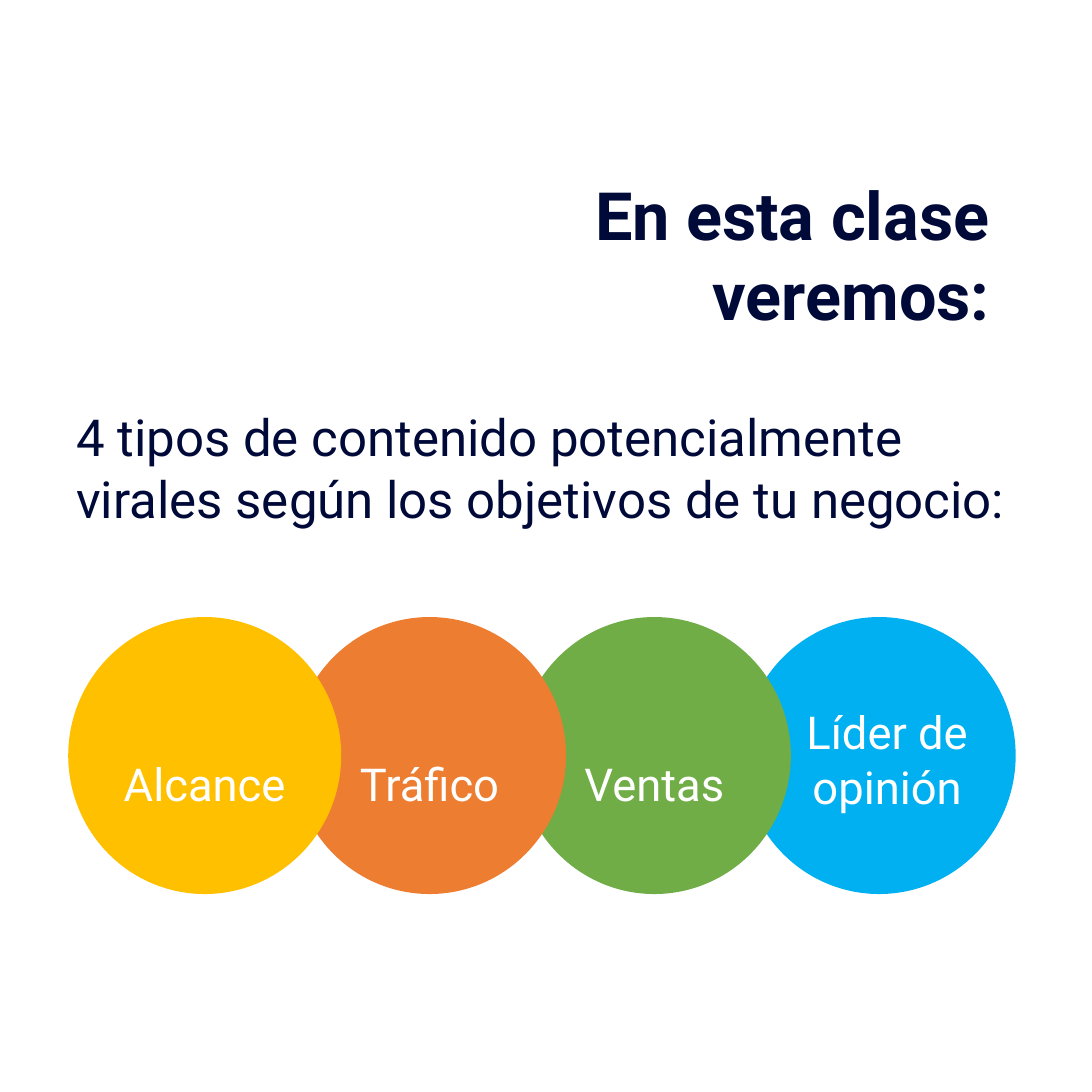
from pptx import Presentation
from pptx.dml.color import RGBColor
from pptx.enum.shapes import MSO_SHAPE
from pptx.enum.text import MSO_ANCHOR, MSO_AUTO_SIZE, PP_ALIGN
from pptx.util import Cm, Pt

COLORS = {
    "navy": "000A39",
    "white": "FFFFFF",
    "yellow": "FFC000",
    "orange": "ED7D31",
    "green": "70AD47",
    "blue": "00B0F0",
}
SIDE = 27.2
LEFT, TOP, STEP = 1.7, 15.37, 5.6
WIDE, HIGH = 6.8, 6.9

# text, fill, label shift, label top, label height, line spacing
GOALS = [
    ("Alcance", "yellow", 0, 18.16, 0.89, 1.5),
    ("Tráfico", "orange", 0, 18.16, 0.89, 1.5),
    ("Ventas", "green", 0, 18.16, 0.89, 1.5),
    ("Líder de\nopinión", "blue", 0.2, 17.55, 2.13, 1.0),
]


def color(name):
    return RGBColor.from_string(COLORS[name])


def write(shape, text, size, tint, align, bold=False, anchor=MSO_ANCHOR.TOP):
    """Fill a shape with one styled paragraph and return that paragraph."""
    frame = shape.text_frame
    frame.word_wrap = True
    frame.auto_size = MSO_AUTO_SIZE.NONE
    frame.vertical_anchor = anchor
    frame.margin_left = frame.margin_right = 0
    frame.margin_top = frame.margin_bottom = 0
    para = frame.paragraphs[0]
    para.text = text
    para.alignment = align
    for run in para.runs:
        run.font.name = "Roboto"
        run.font.size = Pt(size)
        run.font.bold = bold
        run.font.color.rgb = color(tint)
    return para


def add_title(slide):
    title = slide.shapes.title
    title.left, title.top = Cm(7.55), Cm(4.14)
    title.width, title.height = Cm(17.11), Cm(4.37)
    write(title, "En esta clase veremos:", 47, "navy", PP_ALIGN.RIGHT,
          bold=True, anchor=MSO_ANCHOR.MIDDLE)


def add_intro(slide):
    box = slide.shapes.add_textbox(Cm(1.9), Cm(10.11), Cm(23.6), Cm(3.07))
    write(box, "4 tipos de contenido potencialmente virales "
          "según los objetivos de tu negocio:", 36, "navy", PP_ALIGN.LEFT)


def add_disc(slide, left, fill):
    disc = slide.shapes.add_shape(
        MSO_SHAPE.OVAL, Cm(left), Cm(TOP), Cm(WIDE), Cm(HIGH))
    disc.shadow.inherit = False
    disc.fill.solid()
    disc.fill.fore_color.rgb = color(fill)
    disc.line.fill.background()


def add_label(slide, text, left, top, height, spacing):
    box = slide.shapes.add_textbox(Cm(left), Cm(top), Cm(WIDE), Cm(height))
    para = write(box, text, 32, "white", PP_ALIGN.CENTER)
    para.line_spacing = spacing
    para.space_after = Pt(15)


def add_goals(slide):
    """Draw the discs from right to left, so each overlaps the next."""
    spots = [(LEFT + i * STEP, goal) for i, goal in enumerate(GOALS)]
    for left, goal in reversed(spots):
        add_disc(slide, left, goal[1])
    for left, (text, _, shift, top, height, spacing) in spots:
        add_label(slide, text, left + shift, top, height, spacing)


def main():
    deck = Presentation()
    deck.slide_width = deck.slide_height = Cm(SIDE)
    slide = deck.slides.add_slide(deck.slide_layouts.get_by_name("Title Only"))
    add_title(slide)
    add_goals(slide)
    add_intro(slide)
    deck.save("out.pptx")


if __name__ == "__main__":
    main()
